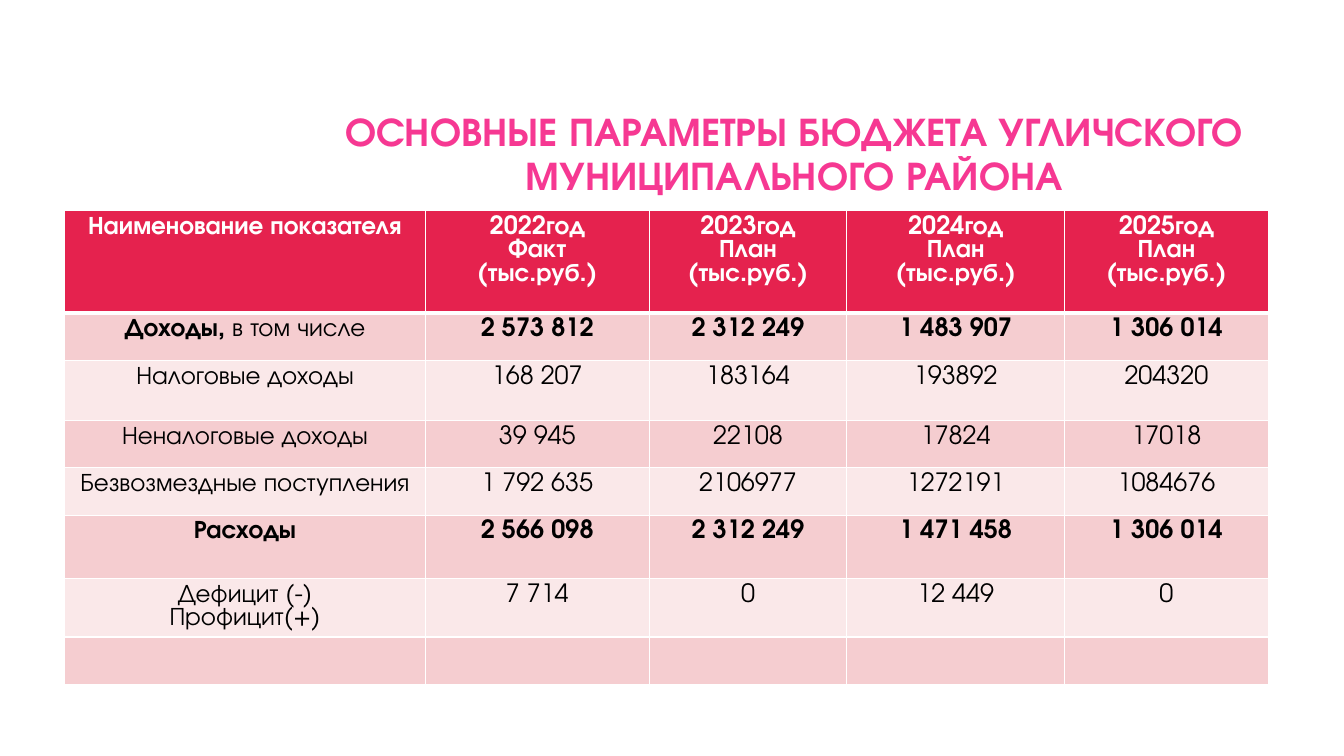
import pptx
import pptx.dml.color
import pptx.enum.text
import pptx.oxml
import pptx.oxml.ns
import pptx.util
from pptx.util import Cm

COLORS = {
    "title": "F63892",
    "header": "E5224E",
    "odd": "F5CDD0",
    "even": "FAE8E9",
    "white": "FFFFFF",
    "black": "000000",
}
COLUMN_WIDTHS = [9.09, 5.64, 4.98, 5.49, 5.13]
ROW_HEIGHTS = [2.59, 1.19, 1.52, 1.19, 1.19, 1.6, 1.47, 1.19]
YEARS = [("2022", "Факт"), ("2023", "План"), ("2024", "План"), ("2025", "План")]
BUDGET_ROWS = [
    ["Доходы, в том числе", "2 573 812", "2 312 249", "1 483 907", "1 306 014"],
    ["Налоговые доходы", "168 207", "183164", "193892", "204320"],
    ["Неналоговые доходы", "39 945", "22108", "17824", "17018"],
    ["Безвозмездные поступления", "1 792 635", "2106977", "1272191", "1084676"],
    ["Расходы", "2 566 098", "2 312 249", "1 471 458", "1 306 014"],
    ["Дефицит (-)\nПрофицит(+)", "7 714", "0", "12 449", "0"],
    [""] * 5,
]
TOTAL_ROWS = (1, 5)


def rgb(name):
    return pptx.dml.color.RGBColor.from_string(COLORS[name])


def write_text(frame, text, *, font, size, color, bold=False, spacing=None, plain_tail=""):
    """Write one centred paragraph per line; plain_tail ends the last one unbolded."""
    frame.word_wrap = True
    for index, line in enumerate(text.split("\n")):
        paragraph = frame.paragraphs[0] if index == 0 else frame.add_paragraph()
        paragraph.alignment = pptx.enum.text.PP_ALIGN.CENTER
        paragraph.line_spacing = spacing
        paragraph.font.size = pptx.util.Pt(size)
        for part, weight in ((line, bold), (plain_tail, False)):
            if part:
                run = paragraph.add_run()
                run.text = part
                run.font.name = font
                run.font.size = pptx.util.Pt(size)
                run.font.bold = weight
                run.font.color.rgb = rgb(color)


class BudgetSlide:
    font = "TeX Gyre Adventor"

    def __init__(self, presentation):
        self.slide = presentation.slides.add_slide(presentation.slide_layouts[6])

    def add_title(self, text, left, top, width, height):
        shape = self.slide.shapes.add_textbox(Cm(left), Cm(top), Cm(width), Cm(height))
        shape.text_frame.vertical_anchor = pptx.enum.text.MSO_ANCHOR.MIDDLE
        write_text(shape.text_frame, text, font=self.font, size=28.8,
                   color="title", bold=True, spacing=0.9)

    def add_table(self, rows, left, top):
        shape = self.slide.shapes.add_table(
            len(rows), len(COLUMN_WIDTHS), Cm(left), Cm(top),
            Cm(sum(COLUMN_WIDTHS)), Cm(sum(ROW_HEIGHTS)))
        table = shape.table
        for column, width in zip(table.columns, COLUMN_WIDTHS):
            column.width = Cm(width)
        for row, height in zip(table.rows, ROW_HEIGHTS):
            row.height = Cm(height)
        for row_index, row in enumerate(rows):
            for column_index, text in enumerate(row):
                self.fill_cell(table.cell(row_index, column_index), text, row_index)

    def fill_cell(self, cell, text, row_index):
        is_header = row_index == 0
        self.add_borders(cell, top=3 if row_index == 1 else 1, bottom=3 if is_header else 1)
        cell.fill.solid()
        cell.fill.fore_color.rgb = rgb(
            "header" if is_header else "odd" if row_index % 2 else "even")
        # Only the word before the comma is bold in the income label
        head, comma, tail = text.partition(",")
        write_text(cell.text_frame, head + comma, font=self.font, size=18,
                   color="white" if is_header else "black",
                   bold=is_header or row_index in TOTAL_ROWS,
                   spacing=pptx.util.Pt(16.8), plain_tail=tail)

    def add_borders(self, cell, top, bottom):
        properties = cell._tc.get_or_add_tcPr()
        for side, width in (("L", 1), ("R", 1), ("T", top), ("B", bottom)):
            properties.append(pptx.oxml.parse_xml(
                f'<a:ln{side} {pptx.oxml.ns.nsdecls("a")} w="{pptx.util.Pt(width)}">'
                f'<a:solidFill><a:srgbClr val="{COLORS["white"]}"/></a:solidFill>'
                f'</a:ln{side}>'))


def main():
    presentation = pptx.Presentation()
    presentation.slide_width = Cm(33.87)
    presentation.slide_height = Cm(19.05)
    budget = BudgetSlide(presentation)

    # Title
    budget.add_title("ОСНОВНЫЕ ПАРАМЕТРЫ БЮДЖЕТА УГЛИЧСКОГО МУНИЦИПАЛЬНОГО РАЙОНА",
                     8.05, 2.13, 23.93, 3.58)

    # Budget table
    header = ["Наименование показателя"]
    header += [f"{year}год\n{kind}\n(тыс.руб.)" for year, kind in YEARS]
    budget.add_table([header] + BUDGET_ROWS, 1.63, 5.3)

    presentation.save("out.pptx")


if __name__ == "__main__":
    main()
